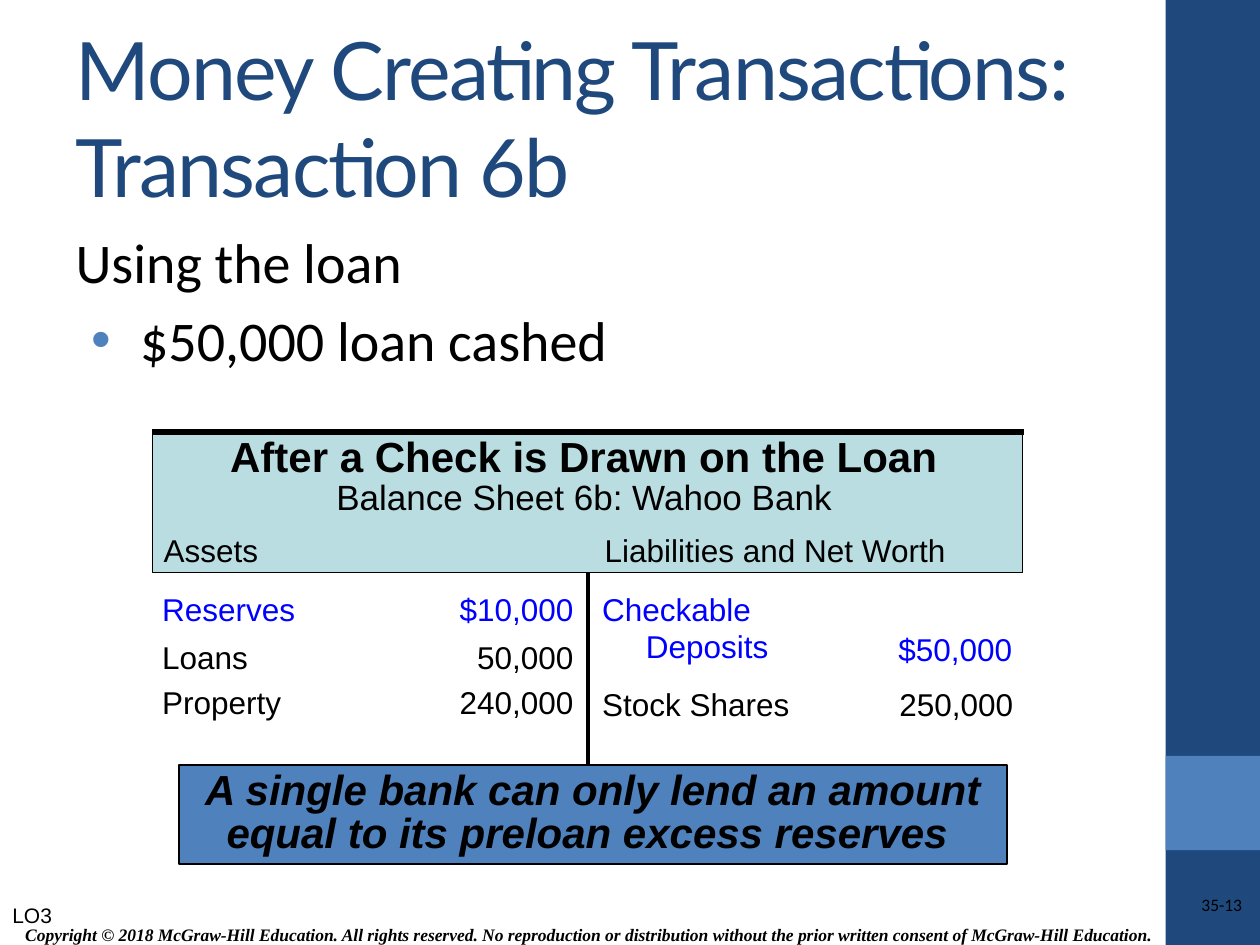
from lxml import etree
from pptx import Presentation
from pptx.dml.color import RGBColor
from pptx.enum.shapes import MSO_CONNECTOR, MSO_SHAPE
from pptx.enum.text import MSO_ANCHOR, MSO_AUTO_SIZE, PP_ALIGN
from pptx.oxml.ns import qn
from pptx.util import Cm, Pt

COLORS = {"navy": "1F497D", "blue": "4F81BD", "teal": "BADDE1",
          "black": "000000", "entry": "0000FF"}
LEFT, CENTER, RIGHT = PP_ALIGN.LEFT, PP_ALIGN.CENTER, PP_ALIGN.RIGHT


def rgb(name):
    return RGBColor.from_string(COLORS[name])


def write(tf, text, size=18, font="Arial", color="black", bold=False,
          italic=False, align=LEFT, spacing=None, anchor=MSO_ANCHOR.TOP,
          wrap=False):
    """Fill a text frame, one paragraph per line of text."""
    tf.word_wrap, tf.auto_size, tf.vertical_anchor = wrap, MSO_AUTO_SIZE.NONE, anchor
    tf.text = text
    for p in tf.paragraphs:
        p.alignment, p.line_spacing = align, spacing
        for r in p.runs:
            r.font.size, r.font.name = Pt(size), font
            r.font.bold, r.font.italic = bold, italic
            r.font.color.rgb = rgb(color)
    return tf


prs = Presentation()
prs.slide_width, prs.slide_height = Cm(25.4), Cm(19.05)
s = prs.slides.add_slide(prs.slide_layouts[1])

# Title
title = s.shapes.title
title.left, title.top, title.width, title.height = Cm(1.27), Cm(0.76), Cm(21.16), Cm(3.18)
tf = write(title.text_frame, "Money Creating Transactions: Transaction 6b", size=46,
           font="Lato", color="navy", anchor=MSO_ANCHOR.MIDDLE, wrap=True)
tf.paragraphs[0].runs[0].font._element.set("spc", "-100")

# Body list: a plain lead line and one bullet
body = s.placeholders[1]
body.left, body.top, body.width, body.height = Cm(1.27), Cm(4.45), Cm(21.16), Cm(13.34)
tf = write(body.text_frame, "Using the loan\n$50,000 loan cashed", size=32,
           font="Calibri", wrap=True)
lead, item = tf.paragraphs
lead.space_before, item.space_before = Pt(0), Pt(6.4)
item.level = 1
for p, margin, indent in ((lead, 0, 0), (item, 1.3, -0.97)):
    pPr = p._p.get_or_add_pPr()
    pPr.set("marL", str(Cm(margin)))
    pPr.set("indent", str(Cm(indent)))
etree.SubElement(lead._p.pPr, qn("a:buNone"))
bullet_color = etree.SubElement(item._p.pPr, qn("a:buClr"))
etree.SubElement(bullet_color, qn("a:srgbClr"), val=COLORS["blue"])
etree.SubElement(item._p.pPr, qn("a:buFont"), typeface="Arial")
etree.SubElement(item._p.pPr, qn("a:buChar"), char="•")

# Balance sheet rules: centre line and top line
rules = [(11.86, 11.56, 11.86, 15.88, 2.25), (3.07, 8.71, 20.65, 8.71, 3)]
# Side bars, balance sheet header and conclusion box
panels = [
    (23.5, 0, 1.9, 19.05, "navy", False),
    (23.5, 15.24, 1.9, 1.9, "blue", False),
    (3.07, 8.71, 17.55, 2.84, "teal", True),
    (3.61, 15.42, 16.69, 2.0, "blue", True),
]
for x, y, w, h, fill, outlined in panels:
    if fill == "blue" and outlined:
        # The rules lie above the header and below the conclusion box
        for x1, y1, x2, y2, weight in rules:
            line = s.shapes.add_connector(MSO_CONNECTOR.STRAIGHT,
                                          Cm(x1), Cm(y1), Cm(x2), Cm(y2))
            line.line.color.rgb, line.line.width = rgb("black"), Pt(weight)
            etree.SubElement(line._element.spPr, qn("a:effectLst"))
    sp = s.shapes.add_shape(MSO_SHAPE.RECTANGLE, Cm(x), Cm(y), Cm(w), Cm(h))
    sp.shadow.inherit = False
    sp.fill.solid()
    sp.fill.fore_color.rgb = rgb(fill)
    if outlined:
        sp.line.color.rgb, sp.line.width = rgb("black"), Pt(0.75)
    else:
        sp.line.fill.background()
conclusion = sp
write(conclusion.text_frame,
      "A single bank can only lend an amount\nequal to its preloan excess reserves ",
      size=24, bold=True, italic=True, align=CENTER, spacing=0.85, wrap=True)

# Balance sheet text and footer: x, y, width, height, text, format
entry = {"color": "entry"}
labels = [
    (4.39, 8.56, 14.99, 1.27, "After a Check is Drawn on the Loan", {"size": 24, "bold": True}),
    (6.53, 9.47, 10.59, 1.12, "Balance Sheet 6b: Wahoo Bank", {"size": 20}),
    (3.05, 10.59, 2.41, 1.02, "Assets", {}),
    (11.94, 10.59, 7.39, 1.02, "Liabilities and Net Worth", {}),
    (3.02, 11.76, 3.2, 1.02, "Reserves", entry),
    (9.02, 11.76, 2.79, 1.02, "$10,000", {**entry, "align": RIGHT}),
    (3.02, 12.73, 2.24, 1.02, "Loans", {}),
    (9.02, 12.73, 2.79, 1.02, "50,000", {"align": RIGHT}),
    (3.02, 13.64, 2.92, 1.02, "Property", {}),
    (9.02, 13.64, 2.79, 1.02, "240,000", {"align": RIGHT}),
    (11.89, 11.76, 3.86, 1.78, "Checkable\nDeposits", entry),
    (17.86, 12.57, 2.79, 1.02, "$50,000", entry),
    (11.89, 13.69, 4.29, 1.02, "Stock Shares", {}),
    (17.88, 13.69, 2.79, 1.02, "250,000", {}),
    (0, 18.06, 2.77, 0.76, "LO3", {"size": 12}),
    (0.15, 18.49, 23.42, 0.71,
     "Copyright © 2018 McGraw-Hill Education. All rights reserved. No reproduction or "
     "distribution without the prior written consent of McGraw-Hill Education.",
     {"size": 10, "font": "Times New Roman", "bold": True, "italic": True,
      "align": CENTER, "anchor": MSO_ANCHOR.MIDDLE}),
    (20.09, 18.03, 4.95, 0.76, "35-13",
     {"size": 10, "font": "Calibri", "align": RIGHT, "wrap": True}),
]
for x, y, w, h, text, fmt in labels:
    tf = s.shapes.add_textbox(Cm(x), Cm(y), Cm(w), Cm(h)).text_frame
    write(tf, text, **fmt)
    if text == "35-13":
        tf.margin_left = tf.margin_right = tf.margin_top = tf.margin_bottom = 0
        tf.margin_top = Cm(0.13)
        tf.margin_right = Cm(0.25)
        tf.margin_top = tf.margin_right = 0
    for p in tf.paragraphs[1:]:
        p._p.get_or_add_pPr().set("marL", str(Cm(0.88)))

prs.save("out.pptx")
